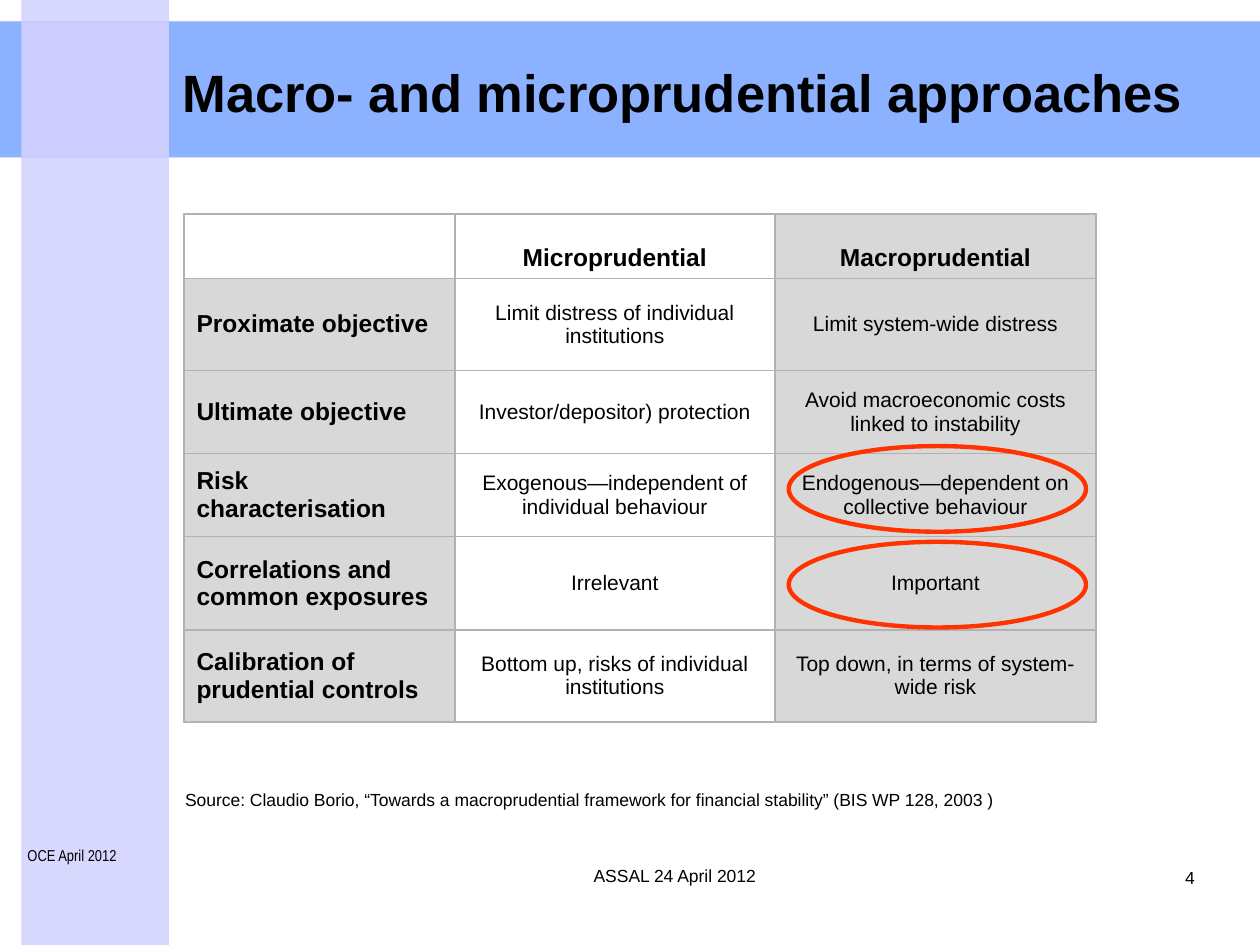
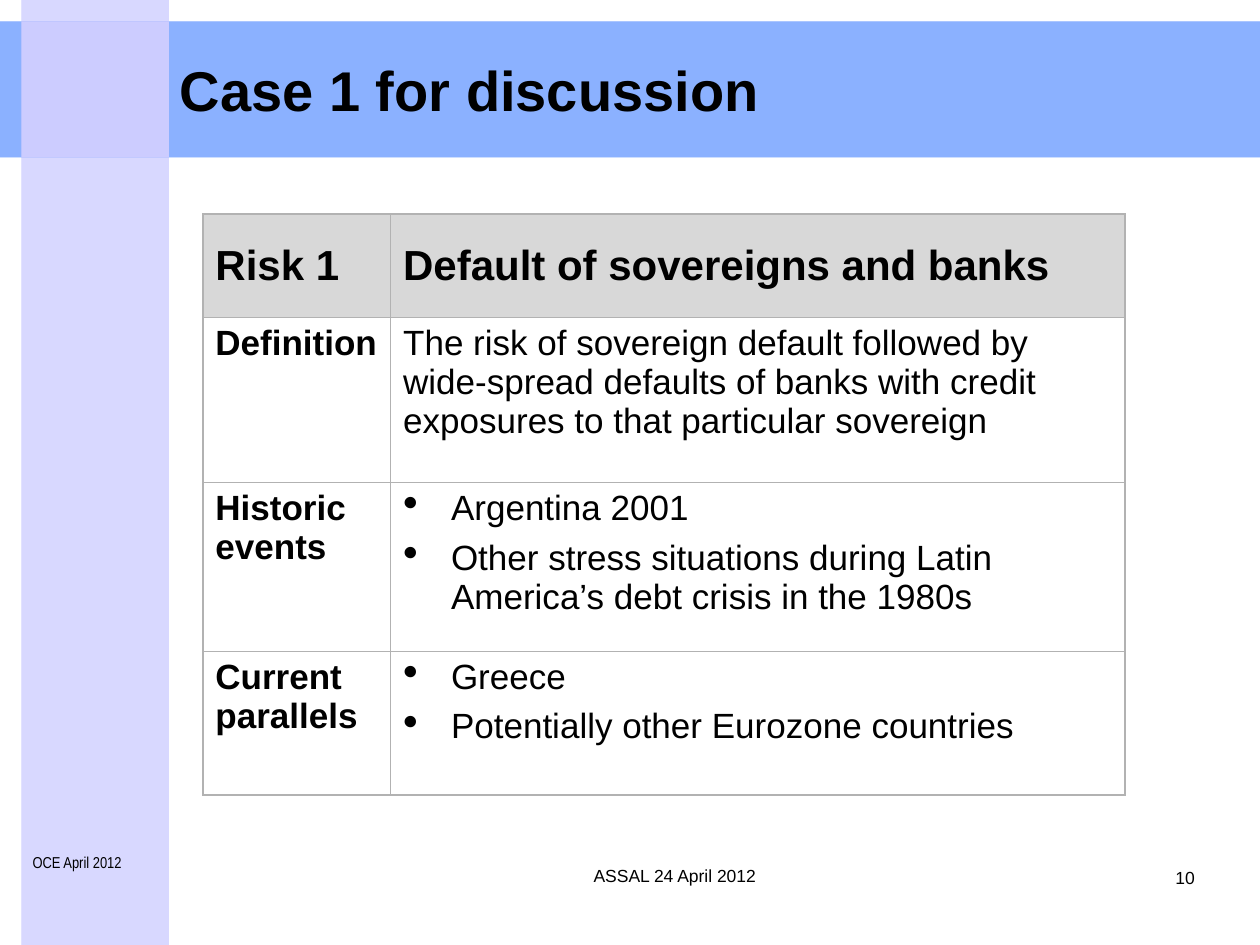
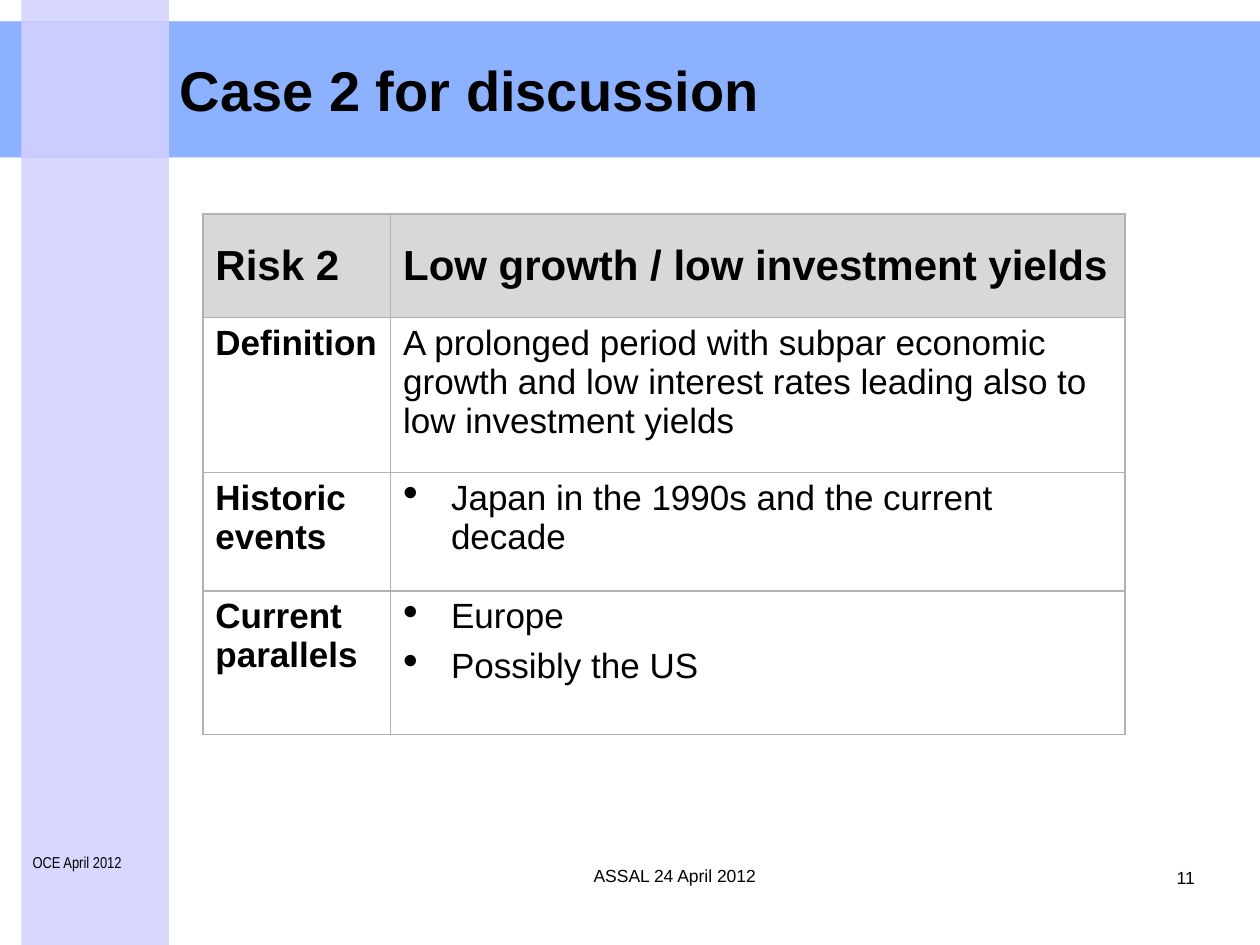
"""Build three slides on macroprudential approaches and discussion cases."""
from dataclasses import dataclass

from lxml.etree import SubElement
from pptx import Presentation
from pptx.dml.color import RGBColor
from pptx.enum.shapes import MSO_SHAPE as Shape
from pptx.enum.text import MSO_ANCHOR as Anchor, PP_ALIGN as Align
from pptx.oxml import parse_xml
from pptx.oxml.ns import nsdecls, qn
from pptx.slide import Slide
from pptx.text.text import _Paragraph as Paragraph
from pptx.util import Inches, Pt

BLACK = RGBColor(0x00, 0x00, 0x00)
BLUE = RGBColor(0x66, 0x99, 0xFF)
LILAC = RGBColor(0xCC, 0xCC, 0xFF)
GREY = RGBColor(0xB2, 0xB2, 0xB2)
RED = RGBColor(0xFF, 0x33, 0x00)

BULLET_INDENT = Inches(0.38)


@dataclass(frozen=True)
class Box:
    """Position and size in inches."""
    left: float
    top: float
    width: float
    height: float

    def lengths(self) -> list[Inches]:
        """Return the four values as lengths."""
        return [Inches(v) for v in (self.left, self.top, self.width, self.height)]


@dataclass(frozen=True)
class Band:
    """A coloured background band."""
    box: Box
    color: RGBColor
    clear: bool = True


@dataclass(frozen=True)
class Label:
    """A one-paragraph text box."""
    text: str
    box: Box
    size: int = 10
    bold: bool = False
    font: str = "Arial"
    align: Align = Align.LEFT
    anchor: Anchor = Anchor.TOP


@dataclass(frozen=True)
class Entry:
    """Content and style of one table cell."""
    lines: tuple[str, ...]
    size: int
    bold: bool = False
    shaded: bool = False
    bulleted: bool = False
    align: Align = Align.LEFT
    anchor: Anchor = Anchor.TOP


@dataclass(frozen=True)
class Case:
    """A risk case for discussion."""
    number: int
    page: int
    risk: str
    definition: str
    events: tuple[str, ...]
    parallels: tuple[str, ...]
    heights: tuple[float, ...]


TOP_BAND = Band(Box(0, 0.17, 10, 1.08), BLUE)
SIDE_BAND = Band(Box(0.17, 0, 1.17, 7.5), LILAC)
CORNER = Band(Box(0.17, 0.17, 1.17, 1.08), LILAC, clear=False)
BANDS = (TOP_BAND, SIDE_BAND, SIDE_BAND, TOP_BAND, CORNER)

CASE_TITLE = Box(1.33, 0.17, 8.5, 1.08)
CASE_DATE = Box(0.16, 6.72, 1.02, 0.42)

APPROACHES = (
    ("Proximate objective", "Limit distress of individual institutions",
     "Limit system-wide distress"),
    ("Ultimate objective", "Investor/depositor) protection",
     "Avoid macroeconomic costs linked to instability"),
    ("Risk characterisation", "Exogenous—independent of individual behaviour",
     "Endogenous—dependent on collective behaviour"),
    ("Correlations and common exposures", "Irrelevant", "Important"),
    ("Calibration of prudential controls", "Bottom up, risks of individual institutions",
     "Top down, in terms of system-wide risk"),
)

CASES = (
    Case(1, 10, "Default of sovereigns and banks",
         "The risk of sovereign default followed by wide-spread defaults of banks "
         "with credit exposures to that particular sovereign",
         ("Argentina 2001",
          "Other stress situations during Latin America’s debt crisis in the 1980s"),
         ("Greece", "Potentially other Eurozone countries"),
         (0.82, 1.31, 1.34, 1.14)),
    Case(2, 11, "Low growth / low investment yields",
         "A prolonged period with subpar economic growth and low interest rates "
         "leading also to low investment yields",
         ("Japan in the 1990s and the current decade",),
         ("Europe", "Possibly the US"),
         (0.82, 1.23, 0.94, 1.14)),
)


def make_half_clear(element) -> None:
    """Make every colour inside the element half transparent."""
    for color in element.iter(qn("a:srgbClr")):
        SubElement(color, qn("a:alpha"), val="50000")


def style(p: Paragraph, size: int, bold: bool, align: Align, font: str = "Arial") -> None:
    """Format a paragraph and its runs."""
    p.alignment = align
    for r in p.runs:
        r.font.name, r.font.size, r.font.bold = font, Pt(size), bold
        r.font.color.rgb = BLACK


def add_band(s: Slide, band: Band) -> None:
    """Draw a background band."""
    sp = s.shapes.add_shape(Shape.RECTANGLE, *band.box.lengths())
    sp.shadow.inherit = False
    sp.fill.solid()
    sp.fill.fore_color.rgb = band.color
    sp.line.fill.background()
    if band.clear:
        make_half_clear(sp._element.spPr)


def add_label(s: Slide, label: Label) -> None:
    """Draw a text box."""
    tf = s.shapes.add_textbox(*label.box.lengths()).text_frame
    tf.word_wrap = True
    tf.vertical_anchor = label.anchor
    tf.text = label.text
    style(tf.paragraphs[0], label.size, label.bold, label.align, label.font)


def add_ring(s: Slide, box: Box) -> None:
    """Draw a red ellipse around a table cell."""
    sp = s.shapes.add_shape(Shape.OVAL, *box.lengths())
    sp.shadow.inherit = False
    sp.fill.background()
    sp.line.color.rgb = RED
    sp.line.width = Pt(2.5)


def add_bullet(p: Paragraph) -> None:
    """Give a paragraph a bullet with a hanging indent."""
    pPr = p._p.get_or_add_pPr()
    pPr.set("marL", str(BULLET_INDENT))
    pPr.set("indent", str(-BULLET_INDENT))
    SubElement(pPr, qn("a:buSzPct"), val="125000")
    SubElement(pPr, qn("a:buChar"), char="•")
    p.space_after = Pt(6)


def add_borders(cell) -> None:
    """Draw a thin grey line on each side of a cell."""
    tcPr = cell._tc.get_or_add_tcPr()
    for i, side in enumerate("LRTB"):
        tcPr.insert(i, parse_xml(
            f'<a:ln{side} {nsdecls("a")} w="{Pt(1)}"><a:solidFill>'
            f'<a:srgbClr val="{GREY}"/></a:solidFill></a:ln{side}>'))


def fill_cell(cell, entry: Entry) -> None:
    """Write and format one table cell."""
    cell.vertical_anchor = entry.anchor
    if entry.shaded:
        cell.fill.solid()
        cell.fill.fore_color.rgb = GREY
        make_half_clear(cell._tc.tcPr)
    else:
        cell.fill.background()
    add_borders(cell)
    tf = cell.text_frame
    tf.text = "\n".join(entry.lines)
    for p in tf.paragraphs:
        if entry.bulleted:
            add_bullet(p)
        style(p, entry.size, entry.bold, entry.align)


def add_grid(s: Slide, left: float, widths: tuple[float, ...],
             heights: tuple[float, ...], rows: list[list[Entry]]) -> None:
    """Draw a table from rows of entries."""
    box = Box(left, 1.7, sum(widths), sum(heights))
    table = s.shapes.add_table(len(heights), len(widths), *box.lengths()).table
    for column, width in zip(table.columns, widths):
        column.width = Inches(width)
    for row, height, entries in zip(table.rows, heights, rows):
        row.height = Inches(height)
        for cell, entry in zip(row.cells, entries):
            fill_cell(cell, entry)


def add_page(prs: Presentation, title: str, title_box: Box, size: int,
             page: int, date_box: Box) -> Slide:
    """Add a slide with bands, title and footers."""
    s = prs.slides.add_slide(prs.slide_layouts[6])
    for band in BANDS:
        add_band(s, band)
    for label in (
        Label(title, title_box, size, bold=True, anchor=Anchor.MIDDLE),
        Label("ASSAL 24 April 2012", Box(1.77, 6.82, 7.17, 0.5), align=Align.CENTER),
        Label(str(page), Box(9, 6.83, 0.58, 0.5), align=Align.RIGHT),
        Label("OCE April 2012", date_box, 9, font="Arial Narrow"),
    ):
        add_label(s, label)
    return s


def add_approaches(prs: Presentation) -> None:
    """Add the comparison of the two approaches."""
    s = add_page(prs, "Macro- and microprudential approaches",
                 Box(1.35, 0.22, 8.19, 1.01), 30, 4, Box(0.12, 6.66, 1.33, 0.55))
    heads = (("", False), ("Microprudential", False), ("Macroprudential", True))
    rows = [[Entry((text,), 14, True, shaded, align=Align.CENTER, anchor=Anchor.BOTTOM)
             for text, shaded in heads]]
    for topic, micro, macro in APPROACHES:
        rows.append([
            Entry((topic,), 14, True, True, anchor=Anchor.MIDDLE),
            Entry((micro,), 12, align=Align.CENTER, anchor=Anchor.MIDDLE),
            Entry((macro,), 12, shaded=True, align=Align.CENTER, anchor=Anchor.MIDDLE),
        ])
    add_grid(s, 1.46, (2.15, 2.54, 2.55), (0.51, 0.73, 0.66, 0.66, 0.74, 0.73), rows)
    add_label(s, Label("Source: Claudio Borio, “Towards a macroprudential framework for "
                       "financial stability” (BIS WP 128, 2003 )",
                       Box(1.37, 6.21, 8.39, 0.27)))
    for top in (3.54, 4.3):
        add_ring(s, Box(6.26, top, 2.36, 0.68))


def add_case(prs: Presentation, case: Case) -> None:
    """Add one discussion case."""
    s = add_page(prs, f"Case {case.number} for discussion", CASE_TITLE, 32,
                 case.page, CASE_DATE)
    rows = [[Entry((text,), 24, True, True, anchor=Anchor.MIDDLE)
             for text in (f"Risk {case.number}", case.risk)]]
    for topic, lines, bulleted in (
        ("Definition", (case.definition,), False),
        ("Historic events", case.events, True),
        ("Current parallels", case.parallels, True),
    ):
        rows.append([Entry((topic,), 20, True), Entry(lines, 20, bulleted=bulleted)])
    add_grid(s, 1.61, (1.49, 5.83), case.heights, rows)


def main() -> None:
    """Build and save the presentation."""
    prs = Presentation()
    prs.slide_width, prs.slide_height = Inches(10), Inches(7.5)
    add_approaches(prs)
    for case in CASES:
        add_case(prs, case)
    prs.save("out.pptx")


if __name__ == "__main__":
    main()
